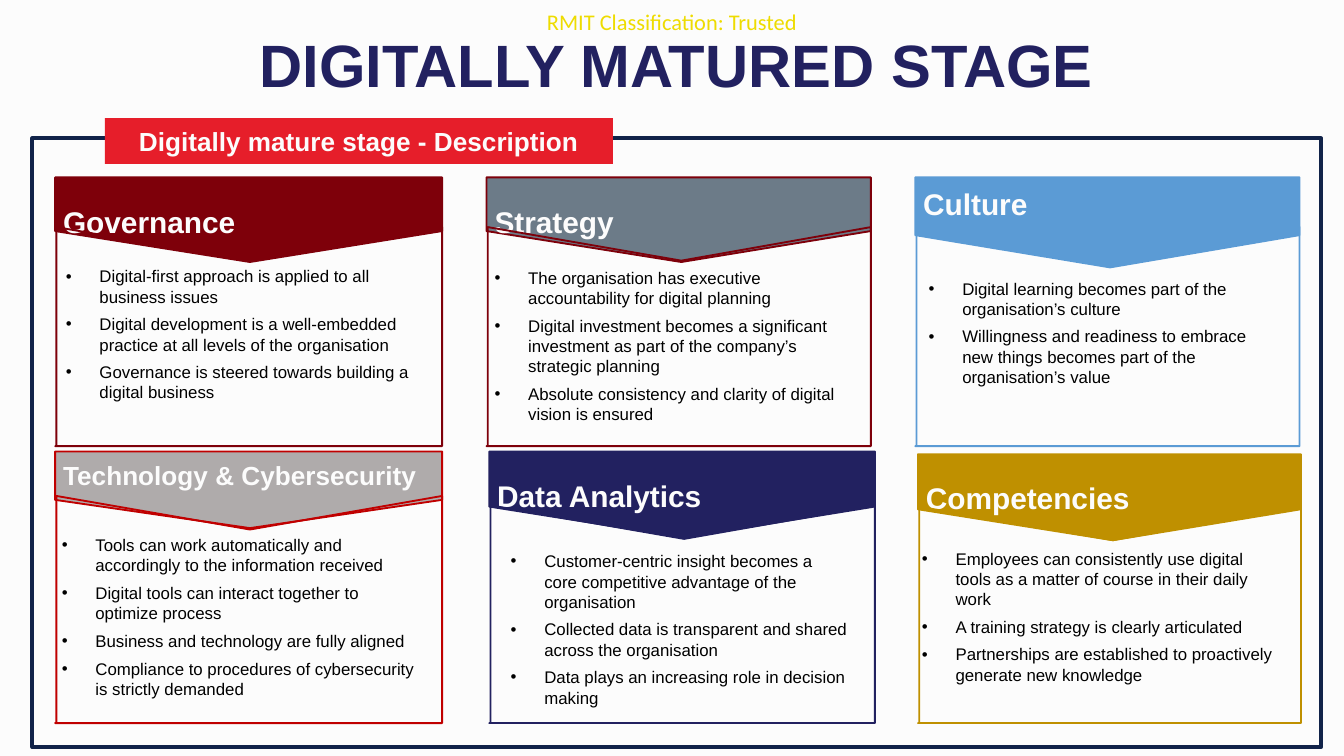
"""Builds the slide describing the digitally matured stage."""
import copy

import pptx
import pptx.dml.color
import pptx.enum.shapes
import pptx.enum.text
import pptx.oxml
import pptx.oxml.ns
import pptx.util

RGB = pptx.dml.color.RGBColor
WHITE = RGB(0xFC, 0xFC, 0xFC)
BLACK = RGB(0x00, 0x00, 0x00)
NAVY = RGB(0x22, 0x21, 0x60)
INK = RGB(0x11, 0x23, 0x49)
RED = RGB(0xE6, 0x1E, 0x2A)
CRIMSON = RGB(0xC0, 0x00, 0x00)
MAROON = RGB(0x7E, 0x00, 0x0A)
SLATE = RGB(0x6C, 0x7B, 0x88)
BLUE = RGB(0x5B, 0x9B, 0xD5)
GREY = RGB(0xAF, 0xAB, 0xAB)
GOLD = RGB(0xBF, 0x90, 0x00)
YELLOW = RGB(0xEE, 0xDC, 0x00)

PX = 9144
FIRST_LIST = 21
ALIGN = pptx.enum.text.PP_ALIGN
ANCHOR = pptx.enum.text.MSO_ANCHOR

CARDS = [
    dict(head="Governance", box=(41, 132, 288, 200), depth=63, notch=169,
         fill=MAROON, line=MAROON, size=16, spacing=1.5, area=(49, 198, 264, 110),
         items=["Digital-first approach is applied to all business issues",
                "Digital development is a well-embedded practice at all levels of the organisation",
                "Governance is steered towards building a digital business"]),
    dict(head="Strategy", box=(362, 132, 286, 200), depth=63, notch=169,
         fill=SLATE, line=MAROON, size=16, spacing=1.5, area=(368, 199, 259, 114),
         items=["The organisation has executive accountability for digital planning",
                "Digital investment becomes a significant investment as part of the company’s strategic planning",
                "Absolute consistency and clarity of digital vision is ensured"]),
    dict(head="Culture", box=(681, 132, 286, 200), depth=67, notch=169,
         fill=BLUE, line=BLUE, size=16, spacing=1.0, area=(691, 207, 261, 123),
         items=["Digital learning becomes part of the organisation’s culture",
                "Willingness and readiness to embrace new things becomes part of the organisation’s value"]),
    dict(head="Technology & Cybersecurity", box=(41, 336, 288, 202), depth=57, notch=369,
         fill=GREY, line=CRIMSON, size=14, spacing=1.0, area=(46, 398, 269, 110),
         items=["Tools can work automatically and accordingly to the information received",
                "Digital tools can interact together to optimize process",
                "Business and technology are fully aligned",
                "Compliance to procedures of cybersecurity is strictly demanded"]),
    dict(head="Data Analytics", box=(364, 336, 287, 202), depth=64, notch=376,
         fill=NAVY, line=NAVY, size=16, spacing=1.5, area=(380, 410, 251, 105),
         items=["Customer-centric insight becomes a core competitive advantage of the organisation",
                "Collected data is transparent and shared across the organisation",
                "Data plays an increasing role in decision making"]),
    dict(head="Competencies", box=(683, 338, 285, 200), depth=64, notch=377,
         fill=GOLD, line=GOLD, size=16, spacing=1.5, area=(686, 408, 264, 116),
         items=["Employees can consistently use digital tools as a matter of course in their daily work",
                "A training strategy is clearly articulated",
                "Partnerships are established to proactively generate new knowledge"]),
]


class Deck:
    """Holds the style and the current slide."""

    font = "Arial"

    def __init__(self, width, lists):
        self.prs = pptx.Presentation()
        self.prs.slide_width = width * PX
        self.prs.slide_height = width * PX * 9 // 16
        layout = self.prs.slide_layouts[1]
        body = layout.placeholders[1].element
        for n in range(FIRST_LIST, FIRST_LIST + lists - 1):
            sp = copy.deepcopy(body)
            sp.ph.idx = n
            sp.nvSpPr.cNvPr.id = n
            body.addnext(sp)
        self.s = self.prs.slides.add_slide(layout)
        fill = self.s.background.fill
        fill.solid()
        fill.fore_color.rgb = WHITE

    def place(self, sp, area):
        sp.left, sp.top, sp.width, sp.height = (v * PX for v in area)

    def frame(self, sp, insets=(0, 0, 0, 0), anchor=ANCHOR.TOP):
        tf = sp.text_frame
        tf.word_wrap = True
        tf.auto_size = pptx.enum.text.MSO_AUTO_SIZE.NONE
        tf.vertical_anchor = anchor
        tf.margin_left, tf.margin_top, tf.margin_right, tf.margin_bottom = (v * PX for v in insets)
        return tf

    def run(self, p, text, size, color, bold=False, font=None):
        r = p.add_run()
        r.text = text
        r.font.name = font or self.font
        r.font.size = pptx.util.Pt(size)
        r.font.bold = bold
        r.font.color.rgb = color

    def paint(self, sp, fill=None, line=None, weight=1):
        sp.shadow.inherit = False
        if fill is None:
            sp.fill.background()
        else:
            sp.fill.solid()
            sp.fill.fore_color.rgb = fill
        if line is None:
            sp.line.fill.background()
        else:
            sp.line.color.rgb = line
            sp.line.width = pptx.util.Pt(weight)

    def title(self, area, text):
        sp = self.s.shapes.title
        self.place(sp, area)
        p = self.frame(sp, (10, 10, 10, 10)).paragraphs[0]
        p.alignment = ALIGN.CENTER
        self.run(p, text, 32, NAVY, True)

    def label(self, area, text, size, color, font):
        x, y, w, h = (v * PX for v in area)
        sp = self.s.shapes.add_textbox(x, y, w, h)
        p = self.frame(sp, anchor=ANCHOR.MIDDLE).paragraphs[0]
        p.alignment = ALIGN.CENTER
        self.run(p, text, size, color, font=font)

    def rect(self, area, fill=None, line=None, weight=1, text=None):
        x, y, w, h = (v * PX for v in area)
        sp = self.s.shapes.add_shape(pptx.enum.shapes.MSO_SHAPE.RECTANGLE, x, y, w, h)
        self.paint(sp, fill, line, weight)
        if text:
            p = self.frame(sp, (10, 5, 10, 5), ANCHOR.MIDDLE).paragraphs[0]
            p.alignment = ALIGN.CENTER
            self.run(p, text, 14, WHITE, True)

    def polygon(self, points, fill=None, line=None):
        builder = self.s.shapes.build_freeform(*points[0], scale=PX)
        builder.add_line_segments(points[1:], close=True)
        sp = builder.convert_to_shape()
        self.paint(sp, fill, line)
        return sp

    def bullets(self, sp, area, items):
        self.place(sp, area)
        tf = self.frame(sp)
        for i, item in enumerate(items):
            p = tf.add_paragraph() if i else tf.paragraphs[0]
            pPr = p._p.get_or_add_pPr()
            pPr.set("marL", str(25 * PX))
            pPr.set("indent", str(-25 * PX))
            ns = pptx.oxml.ns.nsdecls("a")
            for xml in (f'<a:buClr {ns}><a:srgbClr val="{BLACK}"/></a:buClr>',
                        f'<a:buFont {ns} typeface="{self.font}"/>',
                        f'<a:buChar {ns} char="•"/>'):
                pPr.append(pptx.oxml.parse_xml(xml))
            p.alignment = ALIGN.LEFT
            p.space_before = pptx.util.Pt(0)
            p.space_after = pptx.util.Pt(4)
            self.run(p, item, 9, BLACK)

    def card(self, idx, head, box, depth, notch, fill, line, size, spacing, area, items):
        x, y, w, h = box
        mid, right, bottom = x + 145, x + w, y + h
        shoulder = y + round(depth * 0.635)
        sp = self.polygon([(x, y), (x, shoulder), (mid, y + depth), (right, shoulder), (right, y)],
                          fill, line)
        p = self.frame(sp, (6, 6, 6, 6)).paragraphs[0]
        p.alignment = ALIGN.LEFT
        p.line_spacing = spacing
        self.run(p, head, size, WHITE, True)
        self.polygon([(x + 1, notch), (mid, notch + 25), (right, notch), (right, bottom),
                      (x, bottom), (x + 1, bottom)], line=line)
        self.bullets(self.s.placeholders[idx], area, items)


def main():
    deck = Deck(1000, len(CARDS))
    deck.label((387, 0, 226, 32), "RMIT Classification: Trusted", 12, YELLOW, "Calibri")
    deck.title((24, 11, 959, 63), "DIGITALLY MATURED STAGE")
    slots = [1, *range(FIRST_LIST, FIRST_LIST + len(CARDS) - 1)]
    for idx, card in zip(slots, CARDS):
        deck.card(idx, **card)
    deck.rect((24, 103, 959, 453), line=INK, weight=2)
    deck.rect((78, 88, 378, 34), fill=RED, text="Digitally mature stage - Description")
    deck.prs.save("out.pptx")


if __name__ == "__main__":
    main()
